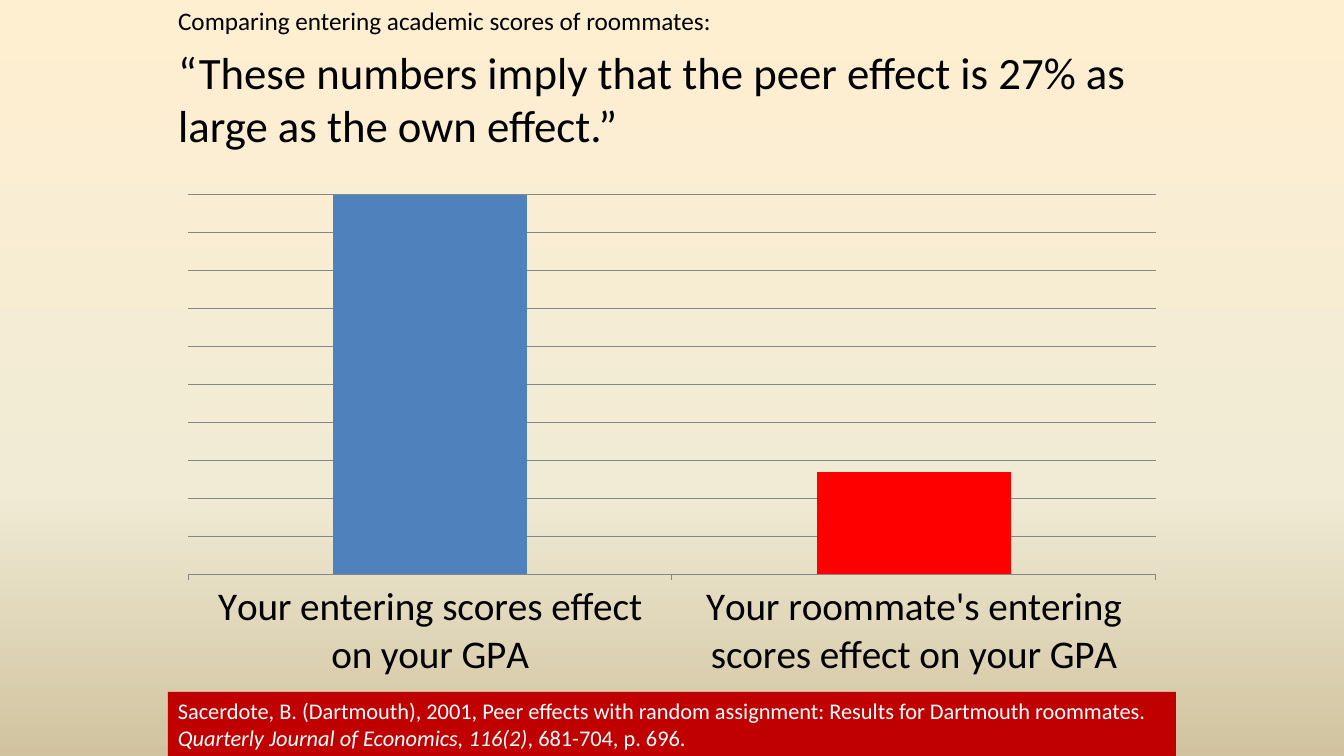
"""Build a slide comparing own and roommate effects on GPA."""
import copy
from dataclasses import dataclass

import pptx
import pptx.chart.data
import pptx.dml.color
import pptx.enum.chart
import pptx.enum.shapes
import pptx.enum.text
import pptx.oxml.ns
import pptx.util

EMU_PER_PX = 9525
FONT = "Calibri"
COLORS = {
    "text": "000000",
    "source_text": "FFFFFF",
    "source_fill": "C00000",
    "own": "4F81BD",
    "roommate": "FF0000",
    "grid": "868686",
}
BACKGROUND_STOPS = [(0, "FFEFD1"), (0.65, "F0EBD5"), (1, "D1C39F")]


@dataclass(frozen=True)
class Box:
    left: int
    top: int
    width: int
    height: int

    def emu(self) -> tuple[int, ...]:
        return tuple(px(n) for n in (self.left, self.top, self.width, self.height))


@dataclass(frozen=True)
class Heading:
    text: str
    size: int


@dataclass(frozen=True)
class Bar:
    category: str
    value: int
    color: str


HEADING_BOX = Box(160, 0, 944, 315)
SOURCE_BOX = Box(160, 659, 960, 61)
CHART_BOX = Box(160, 176, 960, 480)

HEADINGS = [
    Heading("Comparing entering academic scores of roommates:", 18),
    Heading("“These numbers imply that the peer effect is 27% as large as the own effect.”", 32),
]
BARS = [
    Bar("Your entering scores effect on your GPA", 100, "own"),
    Bar("Your roommate's entering scores effect on your GPA", 27, "roommate"),
]
SOURCE_RUNS = [
    ("Sacerdote, B. (Dartmouth), 2001, Peer effects with random assignment: "
     "Results for Dartmouth roommates. ", False),
    ("Quarterly Journal of Economics, 116(2)", True),
    (", 681-704, p. 696.", False),
]


def px(length: int) -> int:
    return pptx.util.Emu(length * EMU_PER_PX)


def rgb(value: str) -> pptx.dml.color.RGBColor:
    return pptx.dml.color.RGBColor.from_string(value)


def set_font(font, size: int, color: str) -> None:
    font.name = FONT
    font.size = pptx.util.Pt(size)
    font.color.rgb = rgb(COLORS[color])


def paint_background(slide) -> None:
    fill = slide.background.fill
    fill.gradient()
    fill.gradient_angle = 270
    stop_list = next(slide.element.iter(pptx.oxml.ns.qn("a:gsLst")))
    stop_list.append(copy.deepcopy(stop_list[0]))
    for stop, (position, color) in zip(fill.gradient_stops, BACKGROUND_STOPS):
        stop.position = position
        stop.color.rgb = rgb(color)


def fill_title(slide) -> None:
    title = slide.shapes.title
    title.left, title.top, title.width, title.height = HEADING_BOX.emu()
    frame = title.text_frame
    frame.auto_size = pptx.enum.text.MSO_AUTO_SIZE.NONE
    frame.vertical_anchor = pptx.enum.text.MSO_ANCHOR.TOP
    frame.text = "\n".join(heading.text for heading in HEADINGS)
    for paragraph, heading in zip(frame.paragraphs, HEADINGS):
        paragraph.alignment = pptx.enum.text.PP_ALIGN.LEFT
        paragraph.space_before = pptx.util.Pt(heading.size * 0.2)
        set_font(paragraph.font, heading.size, "text")


def add_source(slide) -> None:
    shape = slide.shapes.add_shape(pptx.enum.shapes.MSO_SHAPE.RECTANGLE, *SOURCE_BOX.emu())
    shape.shadow.inherit = False
    shape.fill.solid()
    shape.fill.fore_color.rgb = rgb(COLORS["source_fill"])
    shape.line.fill.background()
    frame = shape.text_frame
    frame.word_wrap = True
    frame.vertical_anchor = pptx.enum.text.MSO_ANCHOR.TOP
    paragraph = frame.paragraphs[0]
    paragraph.alignment = pptx.enum.text.PP_ALIGN.LEFT
    set_font(paragraph.font, 16, "source_text")
    for text, italic in SOURCE_RUNS:
        run = paragraph.add_run()
        run.text = text
        run.font.italic = italic


def add_effect_chart(slide) -> None:
    data = pptx.chart.data.CategoryChartData()
    data.categories = [bar.category for bar in BARS]
    data.add_series("Series 1", [bar.value for bar in BARS])
    chart = slide.shapes.add_chart(
        pptx.enum.chart.XL_CHART_TYPE.COLUMN_CLUSTERED, *CHART_BOX.emu(), data
    ).chart
    chart.has_legend = False
    chart.has_title = False
    set_font(chart.font, 10, "text")

    category_axis = chart.category_axis
    set_font(category_axis.tick_labels.font, 28, "text")
    category_axis.major_tick_mark = pptx.enum.chart.XL_TICK_MARK.OUTSIDE
    value_axis = chart.value_axis
    value_axis.visible = False
    value_axis.minimum_scale = 0
    value_axis.maximum_scale = 100
    value_axis.major_unit = 10
    value_axis.has_major_gridlines = True
    for line in (category_axis.format.line, value_axis.major_gridlines.format.line):
        line.color.rgb = rgb(COLORS["grid"])
        line.width = pptx.util.Pt(0.75)

    plot = chart.plots[0]
    plot.gap_width = 150
    plot.vary_by_categories = False
    series = plot.series[0]
    series.format.fill.solid()
    series.format.fill.fore_color.rgb = rgb(COLORS["own"])
    for index, bar in enumerate(BARS):
        fill = series.points[index].format.fill
        fill.solid()
        fill.fore_color.rgb = rgb(COLORS[bar.color])


def main() -> None:
    presentation = pptx.Presentation()
    presentation.slide_width = px(1280)
    presentation.slide_height = px(720)
    title_only = presentation.slide_layouts.get_by_name("Title Only")
    slide = presentation.slides.add_slide(title_only)
    paint_background(slide)
    fill_title(slide)
    add_source(slide)
    add_effect_chart(slide)
    presentation.save("out.pptx")


if __name__ == "__main__":
    main()
